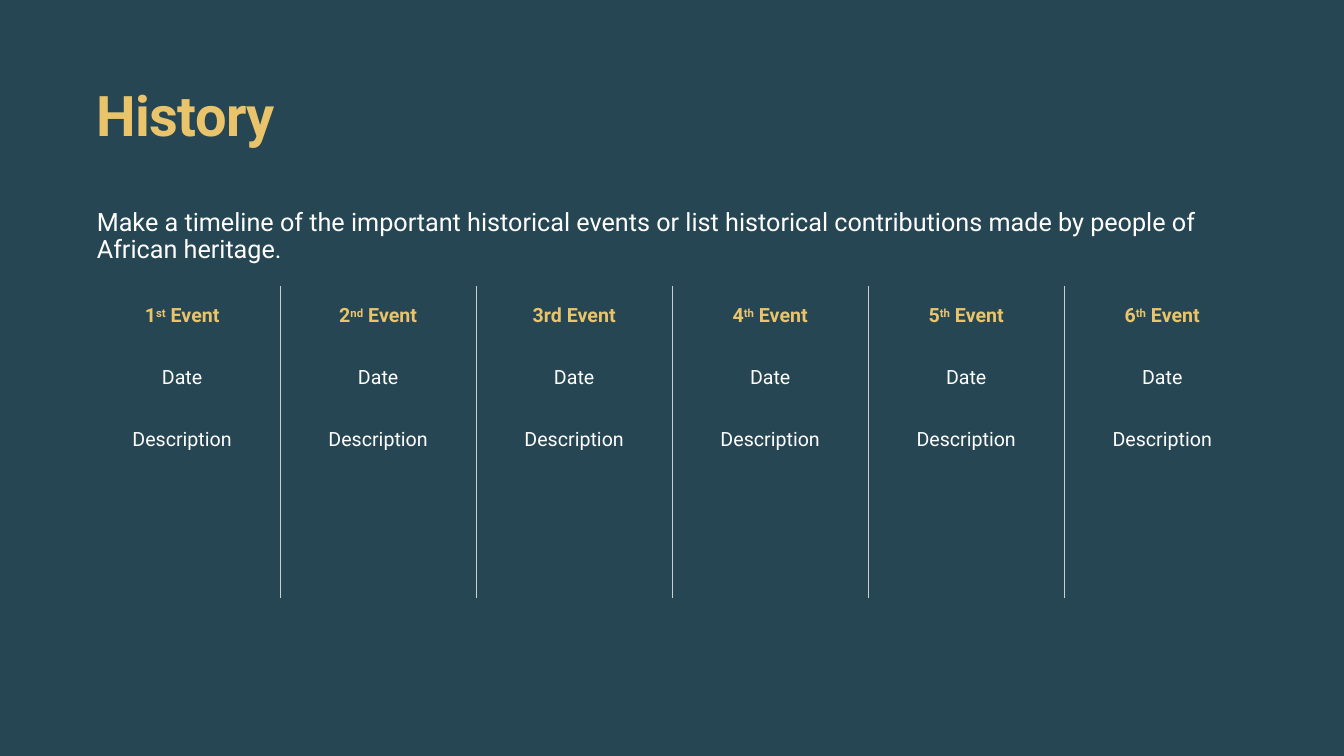
from dataclasses import dataclass

from lxml import etree
from pptx import Presentation
from pptx.dml.color import RGBColor
from pptx.enum.text import MSO_ANCHOR, MSO_AUTO_SIZE, PP_ALIGN
from pptx.oxml.ns import qn
from pptx.util import Cm, Pt

LEFT, CENTER = PP_ALIGN.LEFT, PP_ALIGN.CENTER
TOP, MIDDLE, BOTTOM = MSO_ANCHOR.TOP, MSO_ANCHOR.MIDDLE, MSO_ANCHOR.BOTTOM
NO_AUTOFIT = MSO_AUTO_SIZE.NONE

NAVY, GOLD, WHITE, GREY = "264653", "E9C46A", "FFFFFF", "CFCFCF"
COL_WIDTH = 4.94
ROW_HEIGHTS = (1.54, 1.54, 4.8)

TITLE_FONT = {"name": "Roboto", "size": Pt(40), "bold": True, "color": GOLD}
BODY_FONT = {"name": "Roboto", "size": Pt(18), "bold": False, "color": WHITE}
EVENT_FONT = {**TITLE_FONT, "size": Pt(14)}
CELL_FONT = {**BODY_FONT, "size": Pt(14)}


@dataclass
class Event:
    number: str
    suffix: str
    raised: bool = True


EVENTS = [
    Event("1", "st"),
    Event("2", "nd"),
    Event("3", "rd", raised=False),
    Event("4", "th"),
    Event("5", "th"),
    Event("6", "th"),
]


def rgb(color: str) -> RGBColor:
    return RGBColor.from_string(color)


def add_run(p, text: str, style: dict, **attributes: str) -> None:
    """Add a formatted run; attributes go straight to its rPr element."""
    r = p.add_run()
    r.text = text
    for name, value in style.items():
        if name == "color":
            r.font.color.rgb = rgb(value)
        else:
            setattr(r.font, name, value)
    for name, value in attributes.items():
        r._r.get_or_add_rPr().set(name, value)


def place_text(sp, box: tuple, anchor: MSO_ANCHOR):
    """Move a placeholder, drop its margins and return its first paragraph."""
    sp.left, sp.top, sp.width, sp.height = (Cm(v) for v in box)
    tf = sp.text_frame
    frame = {"word_wrap": True, "auto_size": NO_AUTOFIT, "vertical_anchor": anchor,
             "margin_left": 0, "margin_top": 0, "margin_right": 0, "margin_bottom": 0}
    for name, value in frame.items():
        setattr(tf, name, value)
    p = tf.paragraphs[0]
    p.alignment = LEFT
    p.space_before = Pt(0)
    return p


def set_borders(cell, left: bool, right: bool) -> None:
    tcPr = cell._tc.get_or_add_tcPr()
    sides = {"L": left, "R": right, "T": False, "B": False}
    for i, (side, visible) in enumerate(sides.items()):
        ln = etree.Element(qn(f"a:ln{side}"), w=str(Pt(0.5)))
        if visible:
            fill = etree.SubElement(ln, qn("a:solidFill"))
            etree.SubElement(fill, qn("a:srgbClr"), val=GREY)
        else:
            etree.SubElement(ln, qn("a:noFill"))
        tcPr.insert(i, ln)


def add_timeline(slide) -> None:
    n_rows, n_cols = len(ROW_HEIGHTS), len(EVENTS)
    table = slide.shapes.add_table(
        n_rows, n_cols, Cm(2.12), Cm(7.2),
        Cm(COL_WIDTH * n_cols), Cm(sum(ROW_HEIGHTS))).table
    table.first_row = table.horz_banding = False
    for row, height in zip(table.rows, ROW_HEIGHTS):
        row.height = Cm(height)
    for c, event in enumerate(EVENTS):
        table.columns[c].width = Cm(COL_WIDTH)
        cells = [table.cell(r, c) for r in range(n_rows)]
        for cell in cells:
            cell.fill.background()
            set_borders(cell, left=c > 0, right=c < n_cols - 1)
            cell.vertical_anchor = MIDDLE
            cell.text_frame.paragraphs[0].alignment = CENTER
        cells[-1].vertical_anchor = TOP
        cells[-1].margin_top = Cm(0.51)

        heading, date, description = (x.text_frame.paragraphs[0] for x in cells)
        if event.raised:
            add_run(heading, event.number, EVENT_FONT)
            add_run(heading, event.suffix, EVENT_FONT, baseline="30000")
            add_run(heading, " Event", EVENT_FONT)
        else:
            add_run(heading, f"{event.number}{event.suffix} Event", EVENT_FONT)
        add_run(date, "Date", CELL_FONT)
        add_run(description, "Description", CELL_FONT)


def main() -> None:
    prs = Presentation()
    prs.slide_width, prs.slide_height = Cm(33.87), Cm(19.05)
    slide = prs.slides.add_slide(prs.slide_layouts[1])
    slide.background.fill.solid()
    slide.background.fill.fore_color.rgb = rgb(NAVY)

    title = place_text(slide.shapes.title, (2.44, 1.93, 28.93, 1.78), BOTTOM)
    add_run(title, "History", TITLE_FONT, spc="-50")

    body = place_text(slide.placeholders[1], (2.44, 5.28, 28.93, 1.98), TOP)
    body.line_spacing = 0.9
    pPr = body._p.get_or_add_pPr()
    pPr.set("marL", "0")
    pPr.set("indent", "0")
    etree.SubElement(pPr, qn("a:buNone"))
    add_run(body, "Make a timeline of the important historical events or list historical "
                  "contributions made by people of African heritage.", BODY_FONT)

    add_timeline(slide)
    prs.save("out.pptx")


if __name__ == "__main__":
    main()
